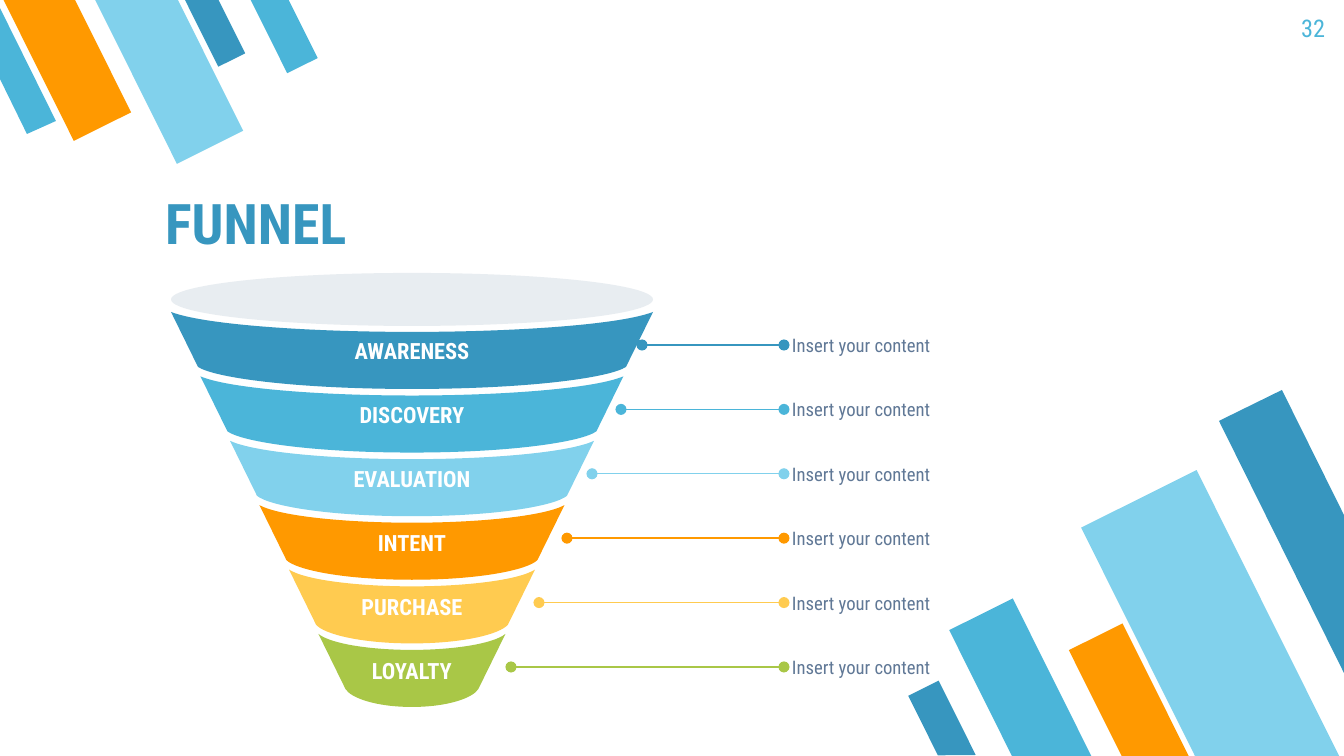
from dataclasses import dataclass

from lxml import etree
from pptx import Presentation
from pptx.dml.color import RGBColor
from pptx.enum.shapes import MSO_CONNECTOR, MSO_SHAPE
from pptx.enum.text import MSO_ANCHOR, MSO_AUTO_SIZE, PP_ALIGN
from pptx.oxml.ns import qn
from pptx.util import Emu, Pt

SLIDE_W, SLIDE_H = 1344, 756
EMU_PER_PX = 9144000 / SLIDE_W


@dataclass(frozen=True)
class Theme:
    font: str = "Roboto Condensed"
    blue: str = "3796BF"
    teal: str = "4BB5D9"
    sky: str = "81D1EC"
    orange: str = "FF9900"
    yellow: str = "FFCB50"
    green: str = "A9C747"
    rim: str = "E8EDF1"
    body: str = "607896"
    white: str = "FFFFFF"
    title_size: int = 30
    number_size: int = 13
    stage_size: int = 12
    note_size: int = 10
    line_width: float = 0.75


THEME = Theme()

# name, colour, x where its leader line starts
STAGES = [
    ("AWARENESS", THEME.blue, 642),
    ("DISCOVERY", THEME.teal, 621),
    ("EVALUATION", THEME.sky, 592),
    ("INTENT", THEME.orange, 567),
    ("PURCHASE", THEME.yellow, 539),
    ("LOYALTY", THEME.green, 511),
]
STAGE_PITCH = 322 / (len(STAGES) - 1)

# Bars are (left, top, width, height, colour) inside their corner's box.
TOP_BARS = [
    (200, -11, 30, 75, THEME.blue),
    (35, -24, 64, 159, THEME.orange),
    (132, -27, 74, 184, THEME.sky),
    (267, -13, 34, 83, THEME.teal),
]
TOP_EDGE_BAR = [(27, 134), (56, 121), (0, 8), (0, 79)]
BOTTOM_BARS = [
    (78, 215, 71, 177, THEME.teal),
    (239, 92, 129, 321, THEME.sky),
    (192, 239, 60, 149, THEME.orange),
    (18, 294, 34, 83, THEME.blue),
]
BOTTOM_EDGE_BAR = [(375, 0), (312, 31), (437, 283), (437, 125)]


def px(length):
    return Emu(round(length * EMU_PER_PX))


def paint(shape, color):
    shape.shadow.inherit = False
    shape.fill.solid()
    shape.fill.fore_color.rgb = RGBColor.from_string(color)
    shape.line.fill.background()


def write(frame, text, size, color, bold=False, align=PP_ALIGN.LEFT,
          anchor=MSO_ANCHOR.MIDDLE, inset=0):
    frame.word_wrap = True
    frame.auto_size = MSO_AUTO_SIZE.NONE
    frame.vertical_anchor = anchor
    frame.margin_left = frame.margin_right = px(inset)
    frame.margin_top = frame.margin_bottom = px(inset)
    paragraph = frame.paragraphs[0]
    paragraph.alignment = align
    run = paragraph.add_run()
    run.text = text
    run.font.name = THEME.font
    run.font.size = Pt(size)
    run.font.bold = bold
    run.font.color.rgb = RGBColor.from_string(color)


def add_outline(slide, points, color, curve_starts=()):
    """A closed outline; each curve start marks three segments to join into a cubic."""
    start, *rest = [(px(x), px(y)) for x, y in points]
    builder = slide.shapes.build_freeform(*start, scale=1.0)
    builder.add_line_segments(rest, close=True)
    outline = builder.convert_to_shape()
    segments = list(outline._element.iter(qn("a:lnTo")))
    for first in curve_starts:
        curve = etree.Element(qn("a:cubicBezTo"))
        segments[first].addprevious(curve)
        for segment in segments[first:first + 3]:
            curve.append(segment[0])
            segment.getparent().remove(segment)
    paint(outline, color)
    return outline


def add_corner_bars(slide, box, bars, rotation, edge_bar, edge_color):
    """Slanted bars, plus the one that the slide's side cuts off."""
    left, top, _, _ = box
    for x, y, width, height, color in bars:
        bar = slide.shapes.add_shape(MSO_SHAPE.FLOWCHART_MANUAL_INPUT,
                                     px(left + x), px(top + y), px(width), px(height))
        bar.rotation = rotation
        bar._element.spPr.get_or_add_xfrm().set("flipH", "1")
        paint(bar, color)
    add_outline(slide, [(left + x, top + y) for x, y in edge_bar], edge_color)


def add_title(slide, box, text):
    title = slide.shapes.title
    title.left, title.top, title.width, title.height = map(px, box)
    write(title.text_frame, text, THEME.title_size, THEME.blue, bold=True,
          anchor=MSO_ANCHOR.BOTTOM, inset=13)


def add_page_number(slide, box, text):
    number = slide.shapes.add_textbox(*map(px, box))
    write(number.text_frame, text, THEME.number_size, THEME.teal,
          align=PP_ALIGN.RIGHT, anchor=MSO_ANCHOR.TOP, inset=13)


def sagging_edge(center, top, half, depth, near, far, far_drop):
    """Points of two cubics, left to right, that hang by depth at the center."""
    left_half = [(center - half, top),
                 (center - far * half, top + far_drop * depth),
                 (center - near * half, top + depth)]
    right_half = [(2 * center - x, y) for x, y in reversed(left_half)]
    return left_half + [(center, top + depth)] + right_half


def add_funnel(slide, box):
    left, top, width, _ = box
    center = left + width / 2
    side_drop, side_inset = 55, 27
    for i, (name, color, _) in enumerate(STAGES):
        half = width / 2 - 29.5 * i
        band_top = top + 39 + STAGE_PITCH * i
        sag = 20 - 0.8 * i
        upper = sagging_edge(center, band_top, half, sag, 0.42, 0.86, 0.65)
        lower = sagging_edge(center, band_top + side_drop, half - side_inset,
                             sag + 2, 0.54, 0.92, 0.5)
        band = add_outline(slide, upper + lower[::-1], color, curve_starts=(0, 3, 7, 10))
        write(band.text_frame, name, THEME.stage_size, THEME.white, bold=True,
              align=PP_ALIGN.CENTER, inset=5)
    rim = slide.shapes.add_shape(MSO_SHAPE.OVAL, px(left), px(top), px(width), px(53))
    paint(rim, THEME.rim)


def add_leader(slide, start_x, end_x, y, color):
    leader = slide.shapes.add_connector(MSO_CONNECTOR.STRAIGHT,
                                        px(start_x), px(y), px(end_x), px(y))
    leader.line.color.rgb = RGBColor.from_string(color)
    leader.line.width = Pt(THEME.line_width)
    line = leader.line._get_or_add_ln()
    for end in ("a:headEnd", "a:tailEnd"):
        etree.SubElement(line, qn(end), type="oval")
    etree.SubElement(leader._element.spPr, qn("a:effectLst"))


def add_notes_column(slide, box, text):
    """One line of text for each stage, with a dotted-end leader to its band."""
    left, top, width, _ = box
    row_height = 46
    for i, (_, color, start_x) in enumerate(STAGES):
        row_top = top + STAGE_PITCH * i
        add_leader(slide, start_x, left - 8, row_top + row_height / 2, color)
        note = slide.shapes.add_textbox(px(left), px(row_top), px(width), px(row_height))
        write(note.text_frame, text, THEME.note_size, THEME.body)


def main():
    deck = Presentation()
    deck.slide_width, deck.slide_height = px(SLIDE_W), px(SLIDE_H)
    slide = deck.slides.add_slide(deck.slide_layouts[5])
    add_corner_bars(slide, (907, 390, 437, 366), BOTTOM_BARS, 153.5,
                    BOTTOM_EDGE_BAR, THEME.blue)
    add_corner_bars(slide, (0, 0, 318, 165), TOP_BARS, 333.5,
                    TOP_EDGE_BAR, THEME.teal)
    add_title(slide, (152, 169, 847, 100), "FUNNEL")
    add_page_number(slide, (1257, 0, 81, 58), "32")
    add_funnel(slide, (171, 273, 482, 434))
    add_notes_column(slide, (792, 322, 372, 368), "Insert your content")
    deck.save("out.pptx")


if __name__ == "__main__":
    main()
